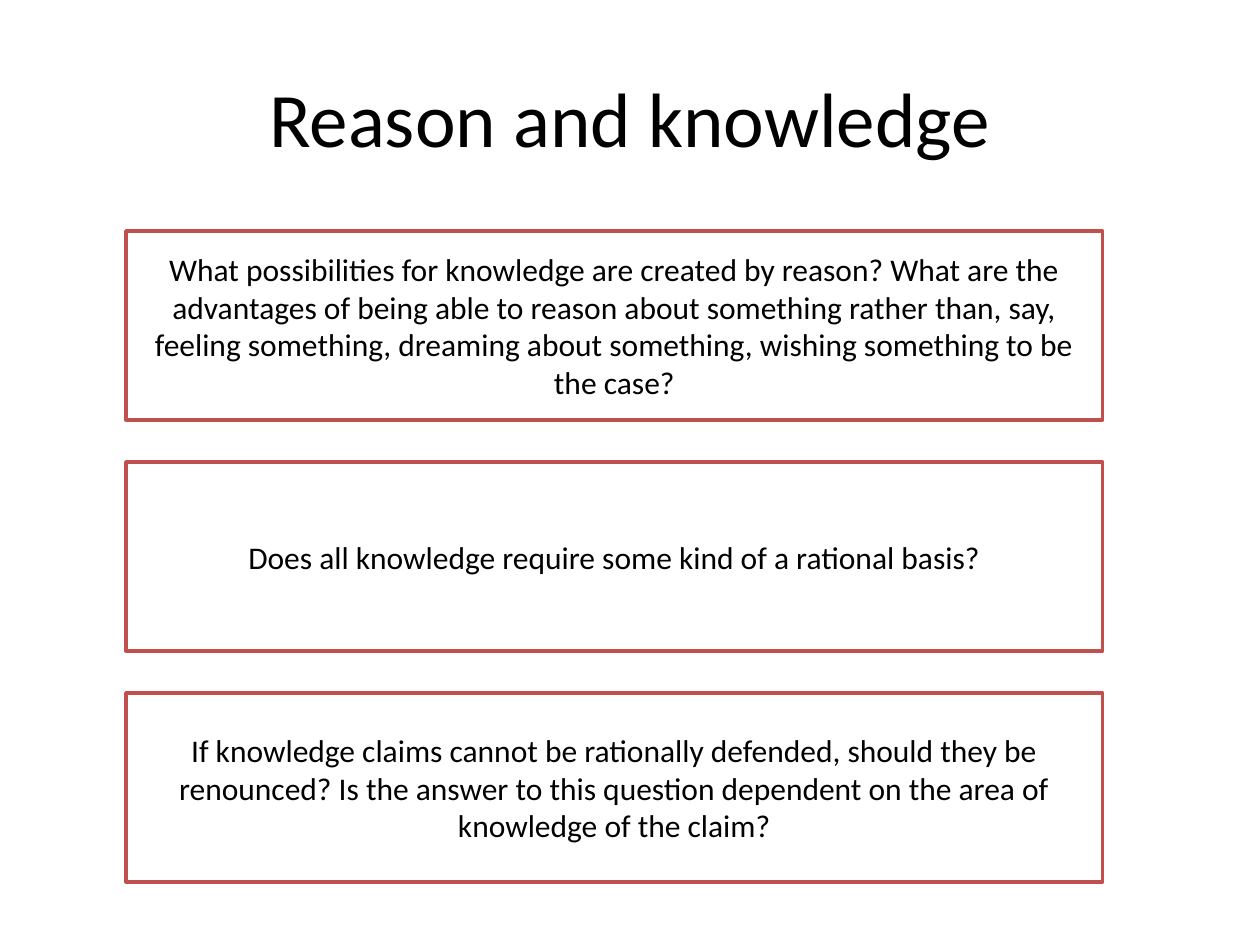
from pptx import Presentation
from pptx.dml.color import RGBColor
from pptx.enum.shapes import MSO_SHAPE
from pptx.enum.text import MSO_ANCHOR, PP_ALIGN
from pptx.util import Pt


def rgb(value):
    return RGBColor.from_string(value)


def write(sp, text, size):
    tf = sp.text_frame
    for name, value in {"word_wrap": True, "vertical_anchor": MSO_ANCHOR.MIDDLE}.items():
        setattr(tf, name, value)
    p = tf.paragraphs[0]
    p.alignment = PP_ALIGN.CENTER
    r = p.add_run()
    r.text = text
    for name, value in {"name": "Calibri", "size": Pt(size)}.items():
        setattr(r.font, name, value)
    r.font.color.rgb = rgb("000000")


prs = Presentation()
prs.slide_width, prs.slide_height = Pt(720), Pt(540)
s = prs.slides.add_slide(prs.slide_layouts[6])

title = s.shapes.add_textbox(Pt(36), Pt(21.6), Pt(648), Pt(90))
write(title, "Reason and knowledge", 44)

questions = [
    "What possibilities for knowledge are created by reason? What are the "
    "advantages of being able to reason about something rather than, say, "
    "feeling something, dreaming about something, wishing something to be the case?",
    "Does all knowledge require some kind of a rational basis?",
    "If knowledge claims cannot be rationally defended, should they be renounced? "
    "Is the answer to this question dependent on the area of knowledge of the claim?",
]
for i, question in enumerate(questions):
    sp = s.shapes.add_shape(MSO_SHAPE.RECTANGLE, Pt(72), Pt(132 + 132 * i), Pt(558), Pt(108))
    sp.shadow.inherit = False
    sp.fill.solid()
    sp.fill.fore_color.rgb = rgb("FFFFFF")
    sp.line.color.rgb = rgb("C0504D")
    sp.line.width = Pt(2)
    write(sp, question, 18)

prs.save("out.pptx")
